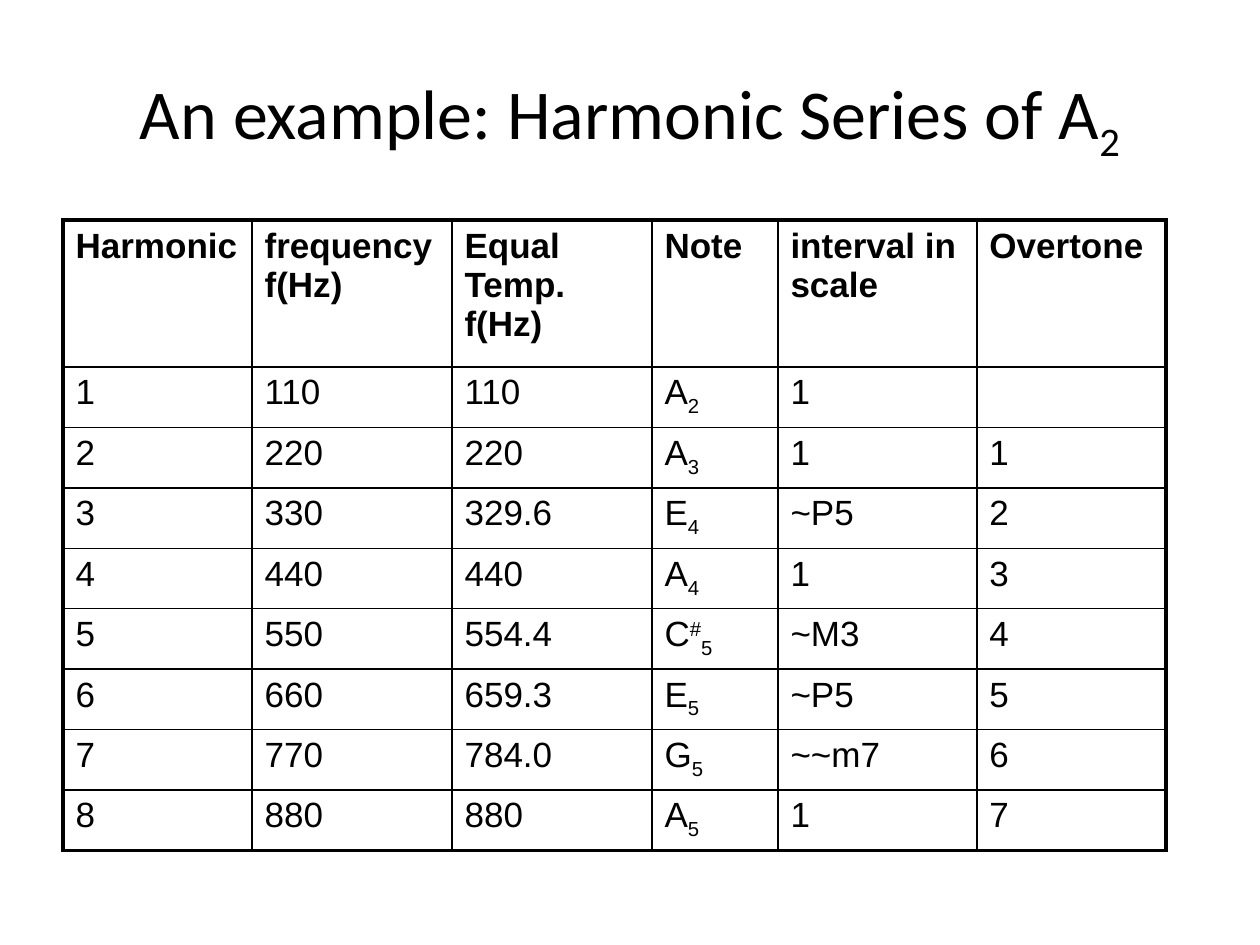
import lxml.etree
import pptx
import pptx.dml.color
import pptx.enum.text
import pptx.oxml.ns
import pptx.util

PX = 914400 / 126
BASELINES = {"_": "-25000", "^": "30000"}


def px(length):
    return pptx.util.Emu(round(length * PX))


def write_runs(paragraph, text, font_name, size, color, bold=False):
    marked = text.replace("_", "|_").replace("^", "|^")
    for piece in marked.split("|"):
        run = paragraph.add_run()
        run.text = piece.lstrip("_^")
        run.font.name = font_name
        run.font.size = pptx.util.Pt(size)
        run.font.bold = bold
        run.font.color.rgb = pptx.dml.color.RGBColor.from_string(color)
        if piece[0] in BASELINES:
            run.font._element.set("baseline", BASELINES[piece[0]])


prs = pptx.Presentation()
prs.slide_width = px(1260)
prs.slide_height = px(945)
slide = prs.slides.add_slide(prs.slide_layouts[6])

title = slide.shapes.add_textbox(px(63), px(38), px(1134), px(158)).text_frame
title.word_wrap = True
title.vertical_anchor = pptx.enum.text.MSO_ANCHOR.MIDDLE
title.paragraphs[0].alignment = pptx.enum.text.PP_ALIGN.CENTER
write_runs(title.paragraphs[0], "An example: Harmonic Series of A_2", "Calibri", 40, "000000")

harmonics = [
    ("Harmonic", "frequency f(Hz)", "Equal Temp. f(Hz)", "Note", "interval in scale", "Overtone"),
    ("1", "110", "110", "A_2", "1", ""),
    ("2", "220", "220", "A_3", "1", "1"),
    ("3", "330", "329.6", "E_4", "~P5", "2"),
    ("4", "440", "440", "A_4", "1", "3"),
    ("5", "550", "554.4", "C^#_5", "~M3", "4"),
    ("6", "660", "659.3", "E_5", "~P5", "5"),
    ("7", "770", "784.0", "G_5", "~~m7", "6"),
    ("8", "880", "880", "A_5", "1", "7"),
]
column_widths = [189, 200, 200, 126, 199, 189]
row_heights = [147] + [56] * 8
last_row = len(row_heights) - 1
last_column = len(column_widths) - 1

series = slide.shapes.add_table(
    len(row_heights), len(column_widths),
    px(63), px(220), px(sum(column_widths)), px(sum(row_heights)),
).table
series.first_row = False
series.horz_banding = False
for column, width in zip(series.columns, column_widths):
    column.width = px(width)
for row, height in zip(series.rows, row_heights):
    row.height = px(height)

for r, values in enumerate(harmonics):
    for c, value in enumerate(values):
        cell = series.cell(r, c)
        if value:
            write_runs(cell.text_frame.paragraphs[0], value, "Arial", 20, "000000", r == 0)
        outer_edges = {"L": c == 0, "R": c == last_column, "T": r == 0, "B": r == last_row}
        properties = cell._tc.get_or_add_tcPr()
        for side, outer in outer_edges.items():
            border = lxml.etree.SubElement(properties, pptx.oxml.ns.qn("a:ln" + side))
            border.set("w", str(pptx.util.Pt(2.25 if outer else 1)))
            fill = lxml.etree.SubElement(border, pptx.oxml.ns.qn("a:solidFill"))
            lxml.etree.SubElement(fill, pptx.oxml.ns.qn("a:srgbClr")).set("val", "000000")
        cell.fill.background()

prs.save("out.pptx")
